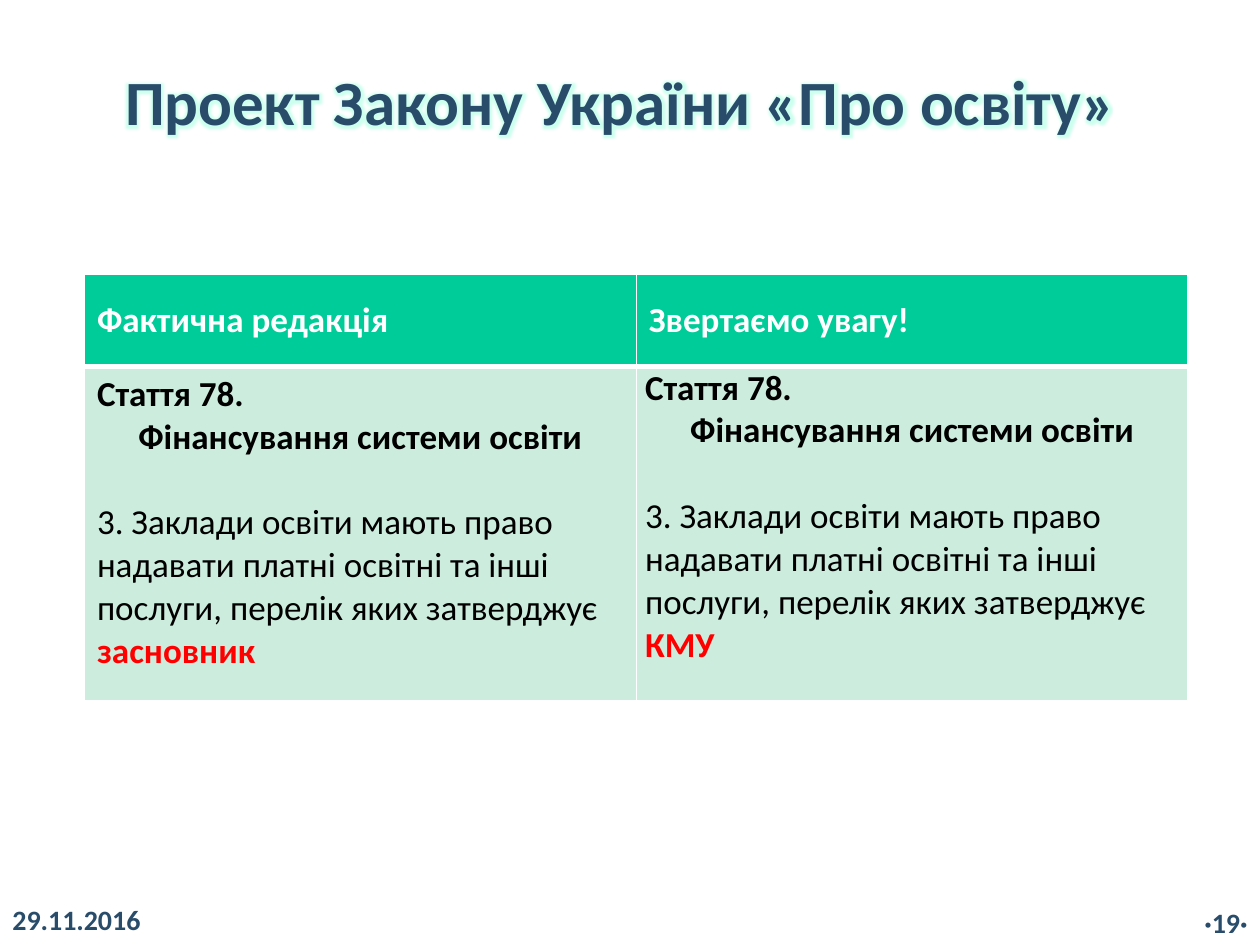
import pptx
import pptx.dml.color
import pptx.enum.text
import pptx.oxml
import pptx.oxml.ns
import pptx.util
from pptx.util import Inches

RGBColor = pptx.dml.color.RGBColor
PP_ALIGN = pptx.enum.text.PP_ALIGN
MSO_ANCHOR = pptx.enum.text.MSO_ANCHOR

NAVY = RGBColor(0x28, 0x4C, 0x6A)
WHITE = RGBColor(0xFF, 0xFF, 0xFF)
BLACK = RGBColor(0, 0, 0)
RED = RGBColor(0xFF, 0, 0)
GREEN = RGBColor(0x00, 0xCC, 0x99)
MINT = RGBColor(0xCC, 0xEC, 0xDE)
GLOW = RGBColor(0xCC, 0xFF, 0xEE)

HEADERS = ["Фактична редакція", "Звертаємо увагу!"]
ARTICLE = "Стаття 78."
SUBJECT = "Фінансування системи освіти"
CLAUSE = "3. Заклади освіти мають право надавати платні освітні та інші послуги, перелік яких затверджує "
APPROVERS = ["засновник", "КМУ"]


class SlideBuilder:
    font = "Calibri"

    def __init__(self, slide):
        self.s = slide

    def style(self, r, size, color, bold=True):
        r.font.name = self.font
        r.font.size = pptx.util.Pt(size)
        r.font.bold = bold
        r.font.color.rgb = color

    def title(self, text, left, top, width, height):
        sp = self.s.shapes.title
        sp.left, sp.top = Inches(left), Inches(top)
        sp.width, sp.height = Inches(width), Inches(height)
        tf = sp.text_frame
        tf.text = text
        tf.word_wrap = True
        tf.vertical_anchor = MSO_ANCHOR.MIDDLE
        p = tf.paragraphs[0]
        p.alignment = PP_ALIGN.CENTER
        r = p.runs[0]
        self.style(r, 36, NAVY)
        effect = pptx.oxml.parse_xml(
            f'<a:effectLst {pptx.oxml.ns.nsdecls("a")}><a:glow rad="63500">'
            f'<a:srgbClr val="{GLOW}"/></a:glow></a:effectLst>')
        fill = r.font._element.find(pptx.oxml.ns.qn("a:solidFill"))
        fill.addnext(effect)

    def text(self, text, left, top, width, height, align):
        sp = self.s.shapes.add_textbox(Inches(left), Inches(top), Inches(width), Inches(height))
        tf = sp.text_frame
        tf.text = text
        tf.word_wrap = True
        p = tf.paragraphs[0]
        p.alignment = align
        self.style(p.runs[0], 16, NAVY)

    def cell(self, cell, fill, borders):
        tcPr = cell._tc.get_or_add_tcPr()
        for side, width in zip("LRTB", borders):
            tcPr.append(pptx.oxml.parse_xml(
                f'<a:ln{side} {pptx.oxml.ns.nsdecls("a")} w="{pptx.util.Pt(width)}">'
                f'<a:solidFill><a:srgbClr val="{WHITE}"/></a:solidFill></a:ln{side}>'))
        cell.fill.solid()
        cell.fill.fore_color.rgb = fill

    def header(self, cell, text):
        self.cell(cell, GREEN, (1, 1, 1, 3))
        cell.vertical_anchor = MSO_ANCHOR.MIDDLE
        cell.text_frame.text = text
        self.style(cell.text_frame.paragraphs[0].runs[0], 20, WHITE)

    def article(self, cell, approver):
        self.cell(cell, MINT, (1, 1, 3, 1))
        tf = cell.text_frame
        tf.text = "\n".join([ARTICLE, SUBJECT, CLAUSE])
        heading, subject, clause = tf.paragraphs
        subject.alignment = PP_ALIGN.CENTER
        clause.space_before = pptx.util.Pt(24.4)
        for p in (heading, subject, clause):
            self.style(p.runs[0], 20, BLACK, p is not clause)
        r = clause.add_run()
        r.text = approver
        self.style(r, 20, RED)

    def table(self, left, top, widths, heights):
        table = self.s.shapes.add_table(
            len(heights), len(widths), Inches(left), Inches(top),
            Inches(sum(widths)), Inches(sum(heights))).table
        for column, width in zip(table.columns, widths):
            column.width = Inches(width)
        for row, height in zip(table.rows, heights):
            row.height = Inches(height)
        for i, (header, approver) in enumerate(zip(HEADERS, APPROVERS)):
            self.header(table.cell(0, i), header)
            self.article(table.cell(1, i), approver)
        last = table.cell(1, 1)
        last.margin_left = last.margin_right = Inches(0.07)
        last.margin_top = last.margin_bottom = 0


def main():
    prs = pptx.Presentation()
    prs.slide_width, prs.slide_height = Inches(10), Inches(7.5)
    b = SlideBuilder(prs.slides.add_slide(prs.slide_layouts[5]))
    b.title("Проект Закону України «Про освіту»", 0.51, 0.44, 8.83, 0.71)
    b.text("29.11.2016", 0, 7.11, 2.08, 0.39, PP_ALIGN.LEFT)
    b.text("·19·", 7.92, 7.14, 2.08, 0.36, PP_ALIGN.RIGHT)
    b.table(0.67, 2.18, [4.38, 4.38], [0.73, 2.65])
    prs.save("out.pptx")


if __name__ == "__main__":
    main()
